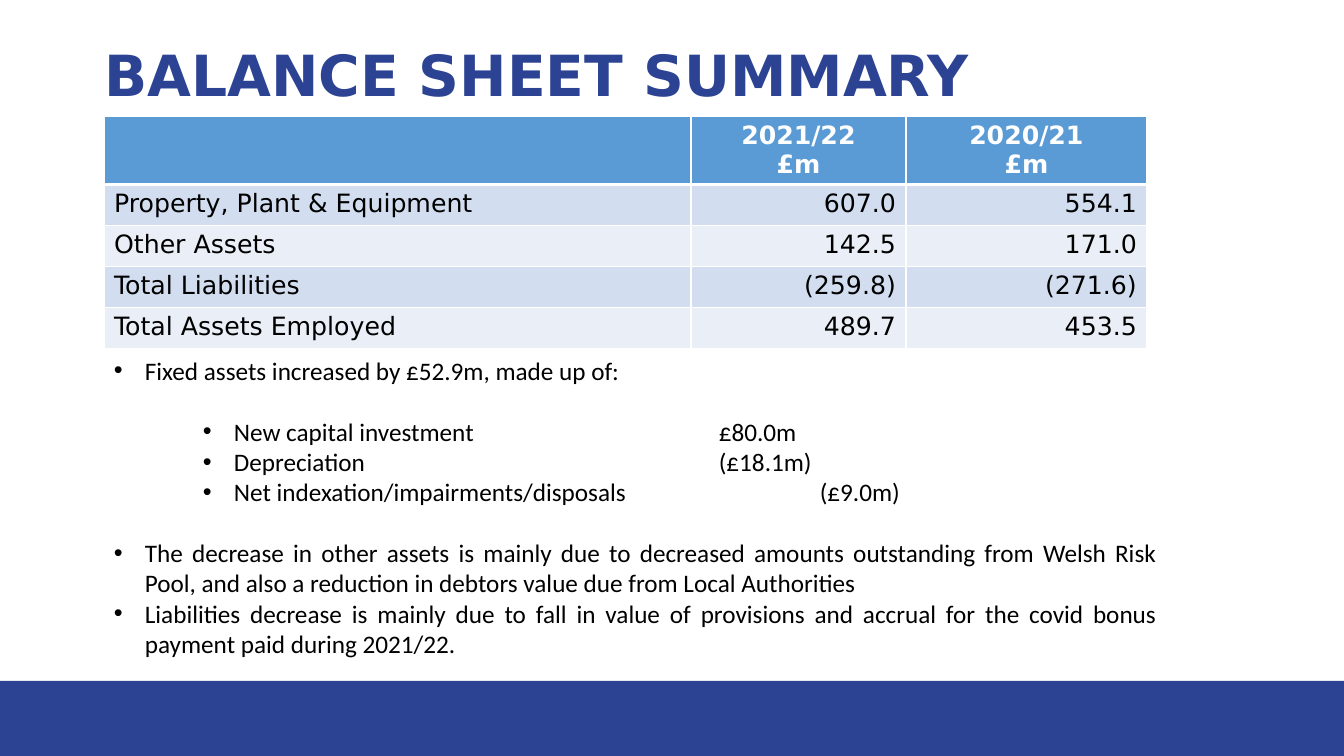
"""Build the balance sheet summary slide."""
from lxml import etree
from pptx import Presentation
from pptx.dml.color import RGBColor
from pptx.enum.shapes import MSO_SHAPE
from pptx.enum.text import MSO_ANCHOR, MSO_AUTO_SIZE, PP_ALIGN
from pptx.oxml.ns import qn
from pptx.util import Pt

LEFT, CENTER, RIGHT, JUSTIFY = PP_ALIGN.LEFT, PP_ALIGN.CENTER, PP_ALIGN.RIGHT, PP_ALIGN.JUSTIFY
MIDDLE, FIT_SHAPE, RECTANGLE = MSO_ANCHOR.MIDDLE, MSO_AUTO_SIZE.SHAPE_TO_FIT_TEXT, MSO_SHAPE.RECTANGLE

TITLE = "BALANCE SHEET SUMMARY"
ROWS = [
    ("", "2021/22\n£m", "2020/21\n£m"),
    ("Property, Plant & Equipment", "607.0", "554.1"),
    ("Other Assets", "142.5", "171.0"),
    ("Total Liabilities", "(259.8)", "(271.6)"),
    ("Total Assets Employed", "489.7", "453.5"),
]
# Each note: text, left margin, tab stop, alignment, points of space before
NOTES = [
    ("Fixed assets increased by £52.9m, made up of:", 31, None, LEFT, 0),
    ("New capital investment\t£80.0m", 120, 605, LEFT, 22),
    ("Depreciation\t(£18.1m)", 120, 605, LEFT, 0),
    ("Net indexation/impairments/disposals\t(£9.0m)", 120, 706, LEFT, 0),
    ("The decrease in other assets is mainly due to decreased amounts outstanding from "
     "Welsh Risk Pool, and also a reduction in debtors value due from Local Authorities",
     31, None, JUSTIFY, 22),
    ("Liabilities decrease is mainly due to fall in value of provisions and accrual for "
     "the covid bonus payment paid during 2021/22.", 31, None, JUSTIFY, 0),
]

COLORS = {"navy": "2C4393", "header": "5B9BD5", "odd": "D2DEEF", "even": "EAEFF7",
          "white": "FFFFFF", "black": "000000"}
TITLE_FONT = {"name": "DejaVu Sans", "size": Pt(40.5), "bold": True}
HEADER_FONT = {"name": "DejaVu Sans", "size": Pt(18), "bold": True}
CELL_FONT = {"name": "DejaVu Sans", "size": Pt(18), "bold": False}
NOTE_FONT = {"name": "Calibri", "size": Pt(18), "bold": False}

SLIDE = (1344, 756)
TITLE_BOX = (94, 40, 1159, 76)
BAND_BOX = (0, 681, 1344, 75)
NOTES_BOX = (104, 350, 1063, 315)
TABLE_AT = (104, 116)
COLUMNS = (587, 215, 241)
HEADER_HEIGHT, ROW_HEIGHT = 68, 41
HANGING = 31
SCALE = 12192000 / SLIDE[0]


def px(length):
    return round(length * SCALE)


def place(shape, box):
    for name, length in zip(("left", "top", "width", "height"), box):
        setattr(shape, name, px(length))


def style(paragraph, formats, color, alignment):
    paragraph.alignment = alignment
    for span in paragraph.runs:
        for name, value in formats.items():
            setattr(span.font, name, value)
        span.font.color.rgb = RGBColor.from_string(COLORS[color])


def fill(shape, color):
    shape.fill.solid()
    shape.fill.fore_color.rgb = RGBColor.from_string(COLORS[color])


def border_cell(cell, is_header):
    properties = cell._tc.get_or_add_tcPr()
    for index, side in enumerate(("lnL", "lnR", "lnT", "lnB")):
        points = 3 if is_header and side == "lnB" else 1
        line = etree.Element(qn("a:" + side), w=str(Pt(points)))
        solid = etree.SubElement(line, qn("a:solidFill"))
        etree.SubElement(solid, qn("a:srgbClr"), val=COLORS["white"])
        properties.insert(index, line)


def add_bullet(paragraph, margin, tab_stop):
    properties = paragraph._p.get_or_add_pPr()
    properties.set("marL", str(px(margin)))
    properties.set("indent", str(-px(HANGING)))
    etree.SubElement(properties, qn("a:buFont"), typeface="Arial")
    etree.SubElement(properties, qn("a:buChar"), char="•")
    if tab_stop:
        stops = etree.SubElement(properties, qn("a:tabLst"))
        etree.SubElement(stops, qn("a:tab"), pos=str(px(tab_stop)), algn="l")


def add_band(page):
    band = page.shapes.add_shape(RECTANGLE, *map(px, BAND_BOX))
    band.shadow.inherit = False
    fill(band, "navy")
    band.line.fill.background()


def add_title(page):
    title = page.shapes.title
    place(title, TITLE_BOX)
    title.text_frame.text = TITLE
    title.text_frame.vertical_anchor = MIDDLE
    paragraph = title.text_frame.paragraphs[0]
    paragraph.line_spacing = 0.9
    style(paragraph, TITLE_FONT, "navy", LEFT)


def add_figures(page):
    heights = [HEADER_HEIGHT] + [ROW_HEIGHT] * (len(ROWS) - 1)
    box = (*TABLE_AT, sum(COLUMNS), sum(heights))
    table = page.shapes.add_table(len(ROWS), len(COLUMNS), *map(px, box)).table
    for column, width in zip(table.columns, COLUMNS):
        column.width = px(width)
    for row_index, values in enumerate(ROWS):
        table.rows[row_index].height = px(heights[row_index])
        is_header = row_index == 0
        shade = "header" if is_header else "odd" if row_index % 2 else "even"
        formats, color = (HEADER_FONT, "white") if is_header else (CELL_FONT, "black")
        for column_index, value in enumerate(values):
            cell = table.cell(row_index, column_index)
            cell.text = value
            fill(cell, shade)
            border_cell(cell, is_header)
            alignment = CENTER if is_header else RIGHT if column_index else LEFT
            for paragraph in cell.text_frame.paragraphs:
                style(paragraph, formats, color, alignment)


def add_notes(page):
    frame = page.shapes.add_textbox(*map(px, NOTES_BOX)).text_frame
    frame.word_wrap = True
    frame.auto_size = FIT_SHAPE
    for index, (text, margin, tab_stop, alignment, space) in enumerate(NOTES):
        paragraph = frame.add_paragraph() if index else frame.paragraphs[0]
        add_bullet(paragraph, margin, tab_stop)
        paragraph.add_run().text = text
        if space:
            paragraph.space_before = Pt(space)
        style(paragraph, NOTE_FONT, "black", alignment)


def main():
    deck = Presentation()
    deck.slide_width, deck.slide_height = map(px, SLIDE)
    page = deck.slides.add_slide(deck.slide_layouts[5])
    add_band(page)
    add_title(page)
    add_figures(page)
    add_notes(page)
    deck.save("out.pptx")


if __name__ == "__main__":
    main()
